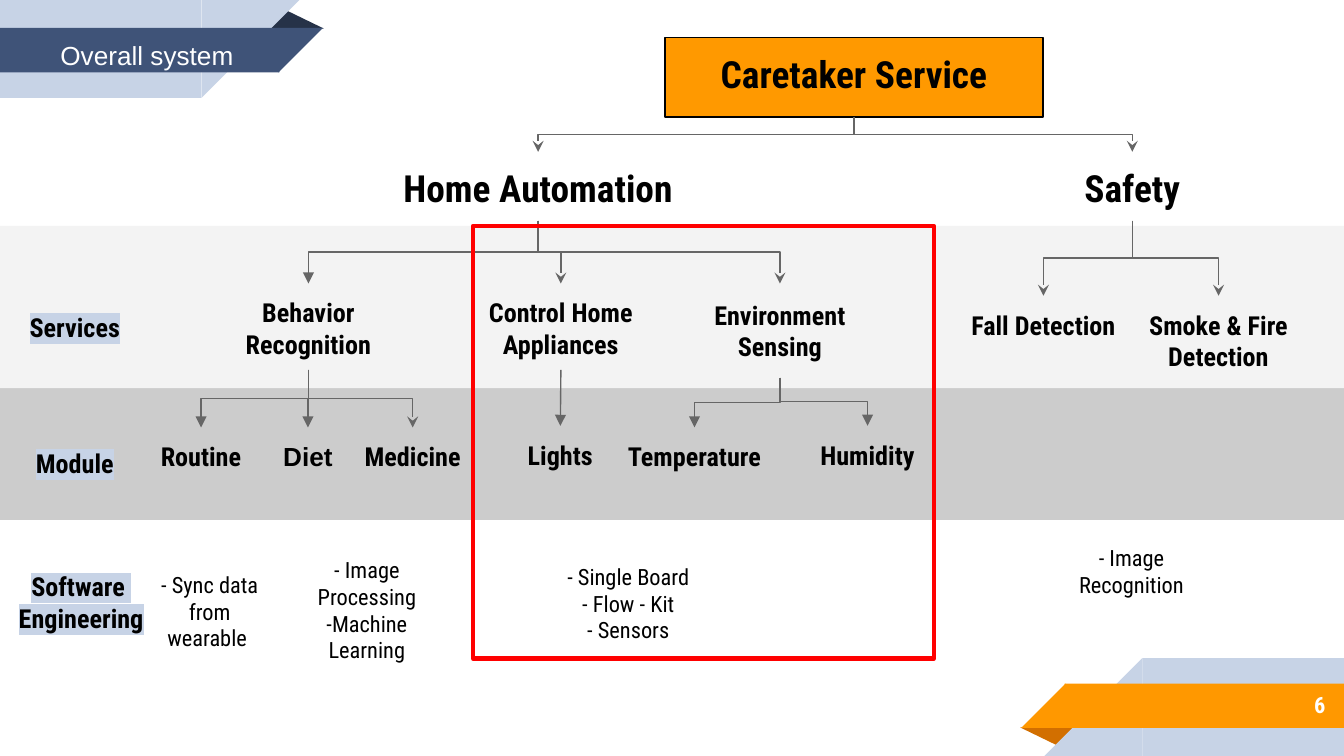
from dataclasses import dataclass

from lxml.etree import SubElement
from pptx import Presentation
from pptx.dml.color import RGBColor
from pptx.enum.shapes import MSO_CONNECTOR, MSO_SHAPE
from pptx.enum.text import MSO_ANCHOR, MSO_AUTO_SIZE, PP_ALIGN
from pptx.oxml.ns import qn
from pptx.util import Cm, Pt

SLIDE_W, SLIDE_H = 25.4, 14.29


@dataclass(frozen=True)
class Theme:
    black: str = "000000"
    white: str = "FFFFFF"
    pale: str = "C7D3E6"
    navy: str = "3F5378"
    navy_fold: str = "263248"
    orange: str = "FF9800"
    orange_fold: str = "D26F00"
    root_fill: str = "FF9900"
    services_band: str = "F3F3F3"
    module_band: str = "CCCCCC"
    arrow: str = "666666"
    focus: str = "FF0000"
    font: str = "Roboto Condensed"
    plain_font: str = "Arial"
    heading: int = 20
    label: int = 14
    note: int = 12


THEME = Theme()


@dataclass(frozen=True)
class Box:
    """Text with its place in centimetres."""
    text: str
    left: float
    top: float
    width: float
    height: float = 1.3
    size: int = THEME.label
    font: str = THEME.font
    anchor: MSO_ANCHOR = MSO_ANCHOR.TOP


@dataclass(frozen=True)
class Branch:
    parent: str
    child: str
    arrowhead: str = "stealth"


ROOT = Box("Caretaker Service", 12.57, 0.71, 7.14, 1.5, THEME.heading)

NODES = [
    Box("Safety", 18.44, 2.87, 5.92, size=THEME.heading),
    Box("Home Automation", 7.21, 2.87, 5.92, size=THEME.heading),
    Box("Behavior Recognition", 3.76, 5.36, 4.14, 1.63),
    Box("Control Home Appliances", 8.53, 5.36, 4.14, 1.63),
    Box("Environment Sensing", 12.67, 5.36, 4.14, 1.78, anchor=MSO_ANCHOR.MIDDLE),
    Box("Fall Detection", 17.65, 5.59, 4.14),
    Box("Smoke & Fire Detection", 20.96, 5.59, 4.14),
    Box("Routine", 2.77, 8.08, 2.06),
    Box("Diet", 4.65, 8.08, 2.34, font=THEME.plain_font),
    Box("Medicine", 6.63, 8.08, 2.34),
    Box("Lights", 9.42, 8.05, 2.34),
    Box("Temperature", 11.51, 8.08, 3.23),
    Box("Humidity", 14.78, 8.05, 3.23, 1.5),
]

ROW_LABELS = [
    Box("Services", -0.3, 5.64, 3.43),
    Box("Module", -0.3, 8.2, 3.43),
    Box("Software \nEngineering", -0.18, 10.54, 3.43),
]

NOTES = [
    Box("- Sync data from wearable ", 2.67, 10.54, 2.59, 2.74, THEME.note),
    Box("- Image Processing\n-Machine Learning", 5.64, 10.26, 2.59, 2.74, THEME.note),
    Box("- Single Board\n- Flow - Kit\n- Sensors", 10.16, 10.39, 3.43, 2.06, THEME.note),
    Box("- Image Recognition", 20.09, 10.03, 2.59, 2.74, THEME.note),
]

BRANCHES = [
    Branch("Caretaker Service", "Home Automation"),
    Branch("Caretaker Service", "Safety"),
    Branch("Safety", "Smoke & Fire Detection"),
    Branch("Safety", "Fall Detection"),
    Branch("Home Automation", "Environment Sensing"),
    Branch("Home Automation", "Behavior Recognition", "triangle"),
    Branch("Home Automation", "Control Home Appliances"),
    Branch("Behavior Recognition", "Medicine"),
    Branch("Behavior Recognition", "Routine", "triangle"),
    Branch("Behavior Recognition", "Diet", "triangle"),
    Branch("Environment Sensing", "Humidity", "triangle"),
    Branch("Environment Sensing", "Temperature", "triangle"),
]
STRAIGHT_BRANCH = Branch("Control Home Appliances", "Lights", "triangle")


def write(shape, text: str, *, size: int = THEME.label, font: str = THEME.font,
          color: str = THEME.black, bold: bool = False, highlight: str | None = None,
          align=PP_ALIGN.CENTER, anchor=MSO_ANCHOR.TOP,
          space_before: float = 0, line_spacing: float = 1.0) -> None:
    """Fill a shape with text, one paragraph for each line."""
    frame = shape.text_frame
    frame.text = text
    frame.word_wrap = True
    frame.auto_size = MSO_AUTO_SIZE.NONE
    frame.vertical_anchor = anchor
    frame.margin_left = frame.margin_right = Cm(0.25)
    frame.margin_top = frame.margin_bottom = Cm(0.25)
    for paragraph in frame.paragraphs:
        paragraph.alignment = align
        paragraph.space_before = Pt(space_before)
        paragraph.line_spacing = line_spacing
        for run in paragraph.runs:
            run.font.size = Pt(size)
            run.font.name = font
            run.font.bold = bold
            run.font.color.rgb = RGBColor.from_string(color)
            if highlight:
                marker = SubElement(run.font._element, qn("a:highlight"))
                SubElement(marker, qn("a:srgbClr"), val=highlight)
                run.font._element.find(qn("a:latin")).addprevious(marker)


def add_box(slide, box: Box, **text_format):
    shape = slide.shapes.add_textbox(Cm(box.left), Cm(box.top), Cm(box.width), Cm(box.height))
    write(shape, box.text, size=box.size, font=box.font, anchor=box.anchor, **text_format)
    return shape


def add_area(slide, left: float, top: float, width: float, height: float, *,
             kind=MSO_SHAPE.RECTANGLE, fill: str | None = None,
             line: str | None = None, line_width: float = 0.75, rotation: float = 0):
    shape = slide.shapes.add_shape(kind, Cm(left), Cm(top), Cm(width), Cm(height))
    shape.shadow.inherit = False
    shape.rotation = rotation
    if fill:
        shape.fill.solid()
        shape.fill.fore_color.rgb = RGBColor.from_string(fill)
    else:
        shape.fill.background()
    if line:
        shape.line.color.rgb = RGBColor.from_string(line)
        shape.line.width = Pt(line_width)
    else:
        shape.line.fill.background()
    return shape


def add_ribbon(slide, band: str, fold: str, half_turn: bool = False) -> None:
    """Draw the top-left ribbon, or turn it round into the bottom-right corner."""
    pieces = [
        (MSO_SHAPE.ISOSCELES_TRIANGLE, fold, 0, 5.03, 0.18, 1.09, 0.36),
        (MSO_SHAPE.RECTANGLE, THEME.pale, 0, 0, 0, 3.81, 1.85),
        (MSO_SHAPE.RIGHT_TRIANGLE, THEME.pale, 90, 3.81, 0, 1.85, 1.85),
        (MSO_SHAPE.RECTANGLE, band, 0, 0, 0.53, 5.28, 0.84),
        (MSO_SHAPE.RIGHT_TRIANGLE, band, 90, 5.26, 0.53, 0.84, 0.84),
    ]
    for kind, fill, rotation, left, top, width, height in pieces:
        if half_turn:
            left, top = SLIDE_W - left - width, SLIDE_H - top - height
            rotation += 180
        piece = add_area(slide, left, top, width, height, kind=kind, fill=fill, rotation=rotation)
        if kind == MSO_SHAPE.ISOSCELES_TRIANGLE:
            piece.adjustments[0] = 0.32


def add_branch(slide, branch: Branch, boxes: dict, kind=MSO_CONNECTOR.ELBOW) -> None:
    connector = slide.shapes.add_connector(kind, 0, 0, 0, 0)
    connector.begin_connect(boxes[branch.parent], 2)
    connector.end_connect(boxes[branch.child], 0)
    connector.line.color.rgb = RGBColor.from_string(THEME.arrow)
    connector.line.width = Pt(0.75)
    properties = connector._element.spPr
    SubElement(properties.find(qn("a:ln")), qn("a:tailEnd"), type=branch.arrowhead)
    SubElement(properties, qn("a:effectLst"))
    if kind == MSO_CONNECTOR.ELBOW:
        turn_downward(connector)


def turn_downward(connector) -> None:
    """Rotate an elbow so that it leaves and arrives vertically."""
    run, drop = connector.end_x - connector.begin_x, connector.end_y - connector.begin_y
    middle_x = (connector.begin_x + connector.end_x) // 2
    middle_y = (connector.begin_y + connector.end_y) // 2
    connector.left, connector.top = middle_x - drop // 2, middle_y - abs(run) // 2
    connector.width, connector.height = drop, abs(run)
    frame = connector._element.spPr.find(qn("a:xfrm"))
    frame.set("rot", str((270 if run > 0 else 90) * 60000))
    frame.set("flipH", "1" if run > 0 else "0")
    frame.set("flipV", "0")


def main() -> None:
    presentation = Presentation()
    presentation.slide_width, presentation.slide_height = Cm(SLIDE_W), Cm(SLIDE_H)
    slide = presentation.slides.add_slide(presentation.slide_layouts[5])

    add_ribbon(slide, THEME.orange, THEME.orange_fold, half_turn=True)
    add_ribbon(slide, THEME.navy, THEME.navy_fold)
    add_area(slide, 0, 7.24, SLIDE_W, 2.59, fill=THEME.module_band)
    add_area(slide, 0, 4.27, SLIDE_W, 3.07, fill=THEME.services_band)
    page_number = Box("6", 21.16, 12.88, 4.14, 0.89, THEME.note, anchor=MSO_ANCHOR.MIDDLE)
    add_box(slide, page_number, color=THEME.white, bold=True, align=PP_ALIGN.RIGHT)

    root = add_area(slide, ROOT.left, ROOT.top, ROOT.width, ROOT.height,
                    fill=THEME.root_fill, line=THEME.black)
    write(root, ROOT.text, size=ROOT.size, bold=True, space_before=10)
    boxes = {ROOT.text: root}
    for node in NODES:
        boxes[node.text] = add_box(slide, node, bold=True)
    for row_label in ROW_LABELS:
        add_box(slide, row_label, bold=True, highlight=THEME.pale)
    for note in NOTES:
        add_box(slide, note)

    add_branch(slide, STRAIGHT_BRANCH, boxes, MSO_CONNECTOR.STRAIGHT)
    for branch in BRANCHES:
        add_branch(slide, branch, boxes)
    add_area(slide, 8.94, 4.27, 8.71, 8.18, line=THEME.focus, line_width=2.25)

    title = slide.shapes.title
    title.left, title.top, title.width, title.height = Cm(0.89), Cm(0.56), Cm(6.17), Cm(0.89)
    write(title, "Overall system", font=THEME.plain_font, color=THEME.white,
          align=PP_ALIGN.LEFT, anchor=MSO_ANCHOR.MIDDLE, line_spacing=1.15)
    slide.shapes._spTree.append(title._element)

    presentation.save("out.pptx")


if __name__ == "__main__":
    main()
